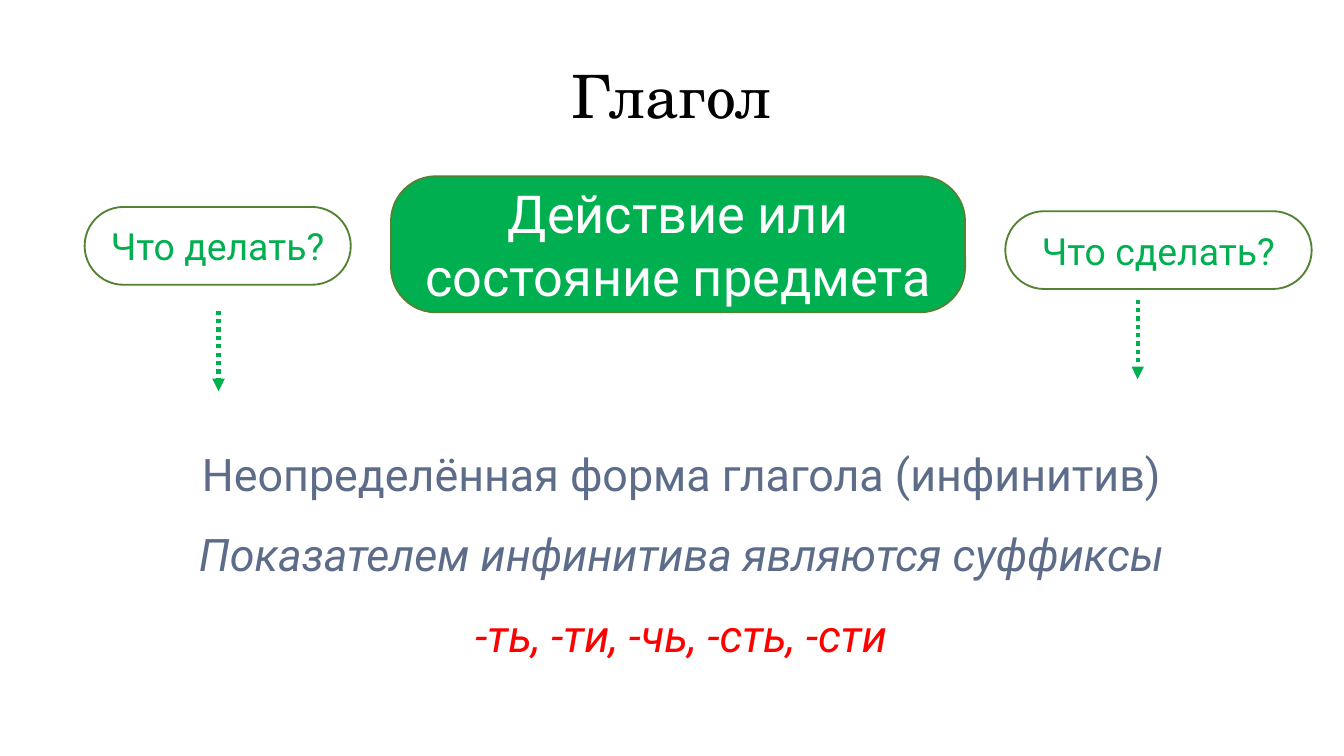
from dataclasses import dataclass

from lxml import etree
from pptx import Presentation
from pptx.dml.color import RGBColor
from pptx.enum.dml import MSO_LINE
from pptx.enum.shapes import MSO_CONNECTOR, MSO_SHAPE
from pptx.enum.text import MSO_ANCHOR, PP_ALIGN
from pptx.oxml.ns import qn
from pptx.util import Cm, Pt

ROUNDED = MSO_SHAPE.ROUNDED_RECTANGLE
STRAIGHT = MSO_CONNECTOR.STRAIGHT
DOTTED = MSO_LINE.ROUND_DOT
CENTER = PP_ALIGN.CENTER
MIDDLE, BOTTOM = MSO_ANCHOR.MIDDLE, MSO_ANCHOR.BOTTOM

COLORS = {
    "title": "000000",
    "green": "00B050",
    "border": "548235",
    "white": "FFFFFF",
    "rule": "5D6C89",
    "suffixes": "FF0000",
}
TITLE_FONT = "TeX Gyre Schola"
BODY_FONT = "Roboto"
NO_SIDE_MARGINS = {"margin_left": 0, "margin_right": 0, "word_wrap": True}


@dataclass
class Box:
    left: float
    top: float
    width: float
    height: float


@dataclass
class Bubble:
    text: str
    box: Box
    rounding: float
    size: int
    fill: str
    ink: str


@dataclass
class Arrow:
    x: float
    top: float
    bottom: float


@dataclass
class Statement:
    text: str
    ink: str
    italic: bool


BUBBLES = [
    Bubble("Действие или состояние предмета", Box(7.39, 3.33, 10.85, 2.57), 0.33, 28, "green", "white"),
    Bubble("Что делать?", Box(1.6, 3.91, 5.03, 1.47), 0.5, 20, "white", "green"),
    Bubble("Что сделать?", Box(19, 3.99, 5.79, 1.47), 0.5, 20, "white", "green"),
]
ARROWS = [Arrow(4.13, 5.87, 7.39), Arrow(21.5, 5.66, 7.16)]
STATEMENTS = [
    Statement("Неопределённая форма глагола (инфинитив)", "rule", False),
    Statement("Показателем инфинитива являются суффиксы", "rule", True),
    Statement("-ть, -ти, -чь, -сть, -сти", "suffixes", True),
]


def rgb(name: str) -> RGBColor:
    return RGBColor.from_string(COLORS[name])


def apply(target, values: dict) -> None:
    for attribute, value in values.items():
        setattr(target, attribute, value)


def bounds(box: Box) -> tuple:
    return Cm(box.left), Cm(box.top), Cm(box.width), Cm(box.height)


def write(paragraph, text: str, ink: str, size: int, font: str = BODY_FONT, italic: bool = False) -> None:
    paragraph.text = text
    paragraph.alignment = CENTER
    apply(paragraph.font, {"name": font, "size": Pt(size), "bold": False, "italic": italic})
    paragraph.font.color.rgb = rgb(ink)


def draw_title(slide, text: str, box: Box) -> None:
    title = slide.shapes.title
    apply(title, dict(zip(("left", "top", "width", "height"), bounds(box))))
    apply(title.text_frame, {
        **NO_SIDE_MARGINS, "margin_top": 0, "margin_bottom": 0, "vertical_anchor": BOTTOM,
    })
    write(title.text_frame.paragraphs[0], text, "title", 32, TITLE_FONT)


def draw_bubble(slide, bubble: Bubble) -> None:
    shape = slide.shapes.add_shape(ROUNDED, *bounds(bubble.box))
    shape.adjustments[0] = bubble.rounding
    shape.shadow.inherit = False
    shape.fill.solid()
    shape.fill.fore_color.rgb = rgb(bubble.fill)
    shape.line.color.rgb = rgb("border")
    shape.line.width = Pt(1)
    apply(shape.text_frame, {**NO_SIDE_MARGINS, "vertical_anchor": MIDDLE})
    write(shape.text_frame.paragraphs[0], bubble.text, bubble.ink, bubble.size)


def draw_statements(slide, statements: list[Statement], box: Box) -> None:
    frame = slide.shapes.add_textbox(*bounds(box)).text_frame
    apply(frame, {"word_wrap": True, "vertical_anchor": BOTTOM})
    for index, statement in enumerate(statements):
        paragraph = frame.add_paragraph() if index else frame.paragraphs[0]
        write(paragraph, statement.text, statement.ink, 24, italic=statement.italic)
        paragraph.line_spacing = 1.5


def draw_arrow(slide, arrow: Arrow) -> None:
    connector = slide.shapes.add_connector(
        STRAIGHT, Cm(arrow.x), Cm(arrow.top), Cm(arrow.x), Cm(arrow.bottom)
    )
    connector.line.color.rgb = rgb("green")
    apply(connector.line, {"width": Pt(2.25), "dash_style": DOTTED})
    properties = connector.element.spPr
    etree.SubElement(properties.find(qn("a:ln")), qn("a:tailEnd"), type="triangle")
    etree.SubElement(properties, qn("a:effectLst"))


def main() -> None:
    deck = Presentation()
    deck.slide_width, deck.slide_height = Cm(25.4), Cm(14.28)
    slide = deck.slides.add_slide(deck.slide_layouts[5])
    draw_title(slide, "Глагол", Box(2.67, 1.07, 20.04, 1.4))
    for bubble in BUBBLES:
        draw_bubble(slide, bubble)
    draw_statements(slide, STATEMENTS, Box(1.63, 7.39, 22.5, 5.23))
    for arrow in ARROWS:
        draw_arrow(slide, arrow)
    deck.save("out.pptx")


if __name__ == "__main__":
    main()
